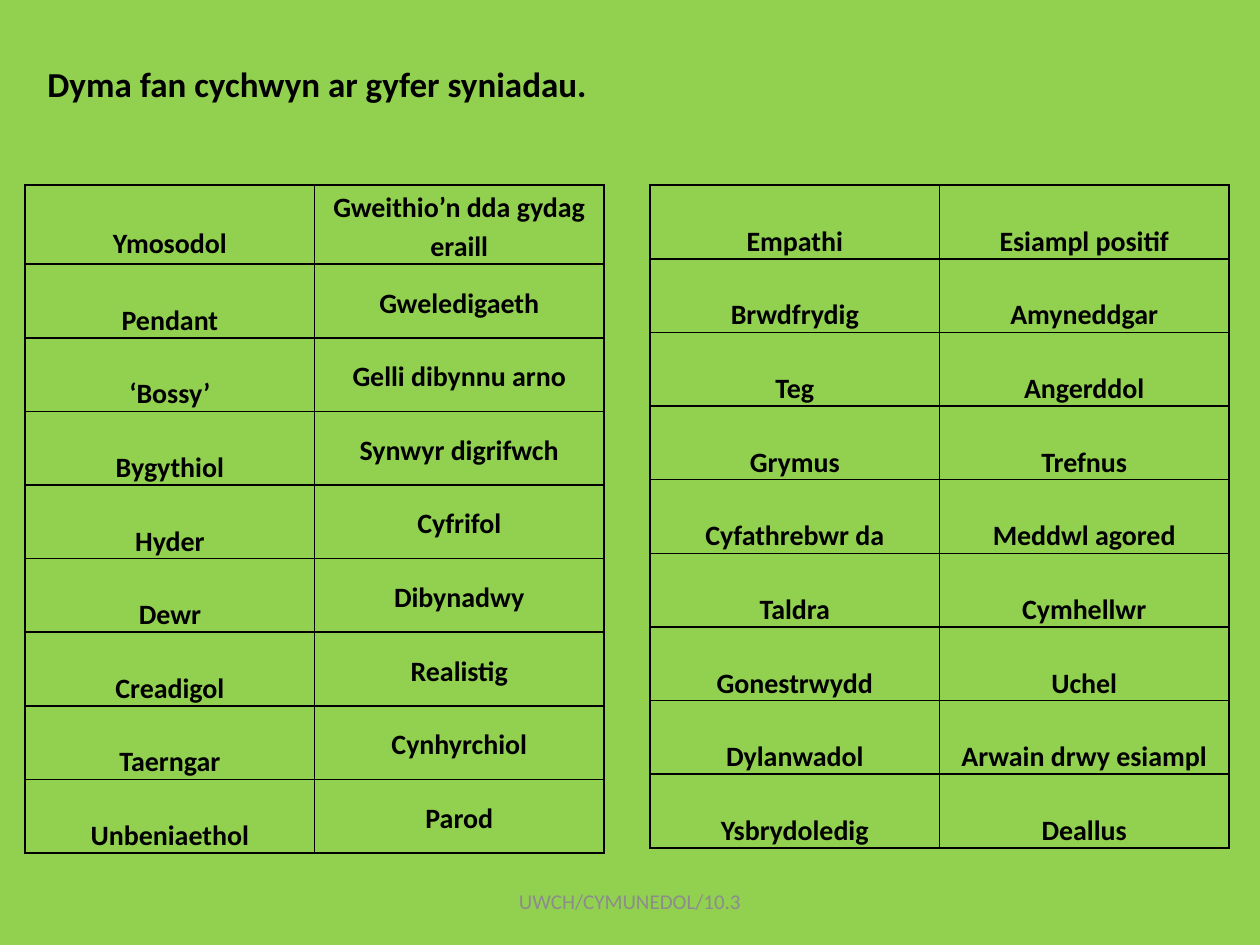
"""Build a slide with two tables of leadership qualities in Welsh."""
import pptx
import pptx.dml.color
import pptx.enum.text
import pptx.oxml
import pptx.oxml.ns
import pptx.util

Pt = pptx.util.Pt
RGBColor = pptx.dml.color.RGBColor
Anchor = pptx.enum.text.MSO_ANCHOR
Align = pptx.enum.text.PP_ALIGN

TITLE = "Dyma fan cychwyn ar gyfer syniadau."
FOOTER = "UWCH/CYMUNEDOL/10.3"
LEFT_WORDS = [
    ("Ymosodol", "Gweithio’n dda gydag eraill"),
    ("Pendant", "Gweledigaeth"),
    ("‘Bossy’", "Gelli dibynnu arno"),
    ("Bygythiol", "Synwyr digrifwch"),
    ("Hyder", "Cyfrifol"),
    ("Dewr", "Dibynadwy"),
    ("Creadigol", "Realistig"),
    ("Taerngar", "Cynhyrchiol"),
    ("Unbeniaethol", "Parod"),
]
RIGHT_WORDS = [
    ("Empathi", "Esiampl positif"),
    ("Brwdfrydig", "Amyneddgar"),
    ("Teg", "Angerddol"),
    ("Grymus", "Trefnus"),
    ("Cyfathrebwr da", "Meddwl agored"),
    ("Taldra", "Cymhellwr"),
    ("Gonestrwydd", "Uchel"),
    ("Dylanwadol", "Arwain drwy esiampl"),
    ("Ysbrydoledig", "Deallus"),
]

GREEN = RGBColor(0x92, 0xD0, 0x50)
BLACK = RGBColor(0, 0, 0)
GREY = RGBColor(0x8C, 0x8C, 0x8C)
FONT = "Calibri"
TABLE_TOP = 105.84
COLUMN_WIDTH = 165.4
ROW_HEIGHT = 42.08
WRAPPED_ROW_HEIGHT = 45.1
TABLES = [
    (14.4, LEFT_WORDS, WRAPPED_ROW_HEIGHT, (Anchor.BOTTOM, Anchor.MIDDLE)),
    (371.5, RIGHT_WORDS, ROW_HEIGHT, (Anchor.BOTTOM, Anchor.BOTTOM)),
]


def write(frame, text, size, color, bold, align):
    para = frame.paragraphs[0]
    para.alignment = align
    span = para.add_run()
    span.text = text
    span.font.name = FONT
    span.font.size = Pt(size)
    span.font.bold = bold
    span.font.color.rgb = color
    return para


def add_text(page, place, text, size, color, bold, align):
    box = page.shapes.add_textbox(*map(Pt, place))
    box.text_frame.word_wrap = True
    box.text_frame.vertical_anchor = Anchor.MIDDLE
    write(box.text_frame, text, size, color, bold, align)


def add_borders(cell):
    properties = cell._tc.get_or_add_tcPr()
    for side in ("lnL", "lnR", "lnT", "lnB"):
        properties.append(pptx.oxml.parse_xml(
            f'<a:{side} {pptx.oxml.ns.nsdecls("a")} w="{Pt(1)}"><a:solidFill>'
            f'<a:srgbClr val="{BLACK}"/></a:solidFill></a:{side}>'))


def add_word_table(page, left, words, first_height, anchors):
    heights = [first_height] + [ROW_HEIGHT] * (len(words) - 1)
    table = page.shapes.add_table(
        len(words), 2, Pt(left), Pt(TABLE_TOP),
        Pt(2 * COLUMN_WIDTH), Pt(sum(heights))).table
    table.first_row = table.horz_banding = False
    for column in table.columns:
        column.width = Pt(COLUMN_WIDTH)
    for row, height, texts in zip(table.rows, heights, words):
        row.height = Pt(height)
        for cell, text, anchor in zip(row.cells, texts, anchors):
            cell.margin_left = cell.margin_right = Pt(3.6)
            cell.margin_top = cell.margin_bottom = 0
            cell.vertical_anchor = anchor
            add_borders(cell)
            cell.fill.background()
            para = write(cell.text_frame, text, 16, BLACK, True, Align.CENTER)
            para.line_spacing = 1.15
    if first_height > ROW_HEIGHT:
        table.cell(0, 0).margin_bottom = Pt((first_height - ROW_HEIGHT) / 2)


def main():
    deck = pptx.Presentation()
    deck.slide_width, deck.slide_height = Pt(720), Pt(540)
    page = deck.slides.add_slide(deck.slide_layouts[6])
    page.background.fill.solid()
    page.background.fill.fore_color.rgb = GREEN
    for left, words, first_height, anchors in TABLES:
        add_word_table(page, left, words, first_height, anchors)
    add_text(page, (20, 32, 340, 31.5), TITLE, 20, BLACK, True, Align.LEFT)
    add_text(page, (246, 500.5, 228, 28.8), FOOTER, 12, GREY, False, Align.CENTER)
    deck.save("out.pptx")


if __name__ == "__main__":
    main()
